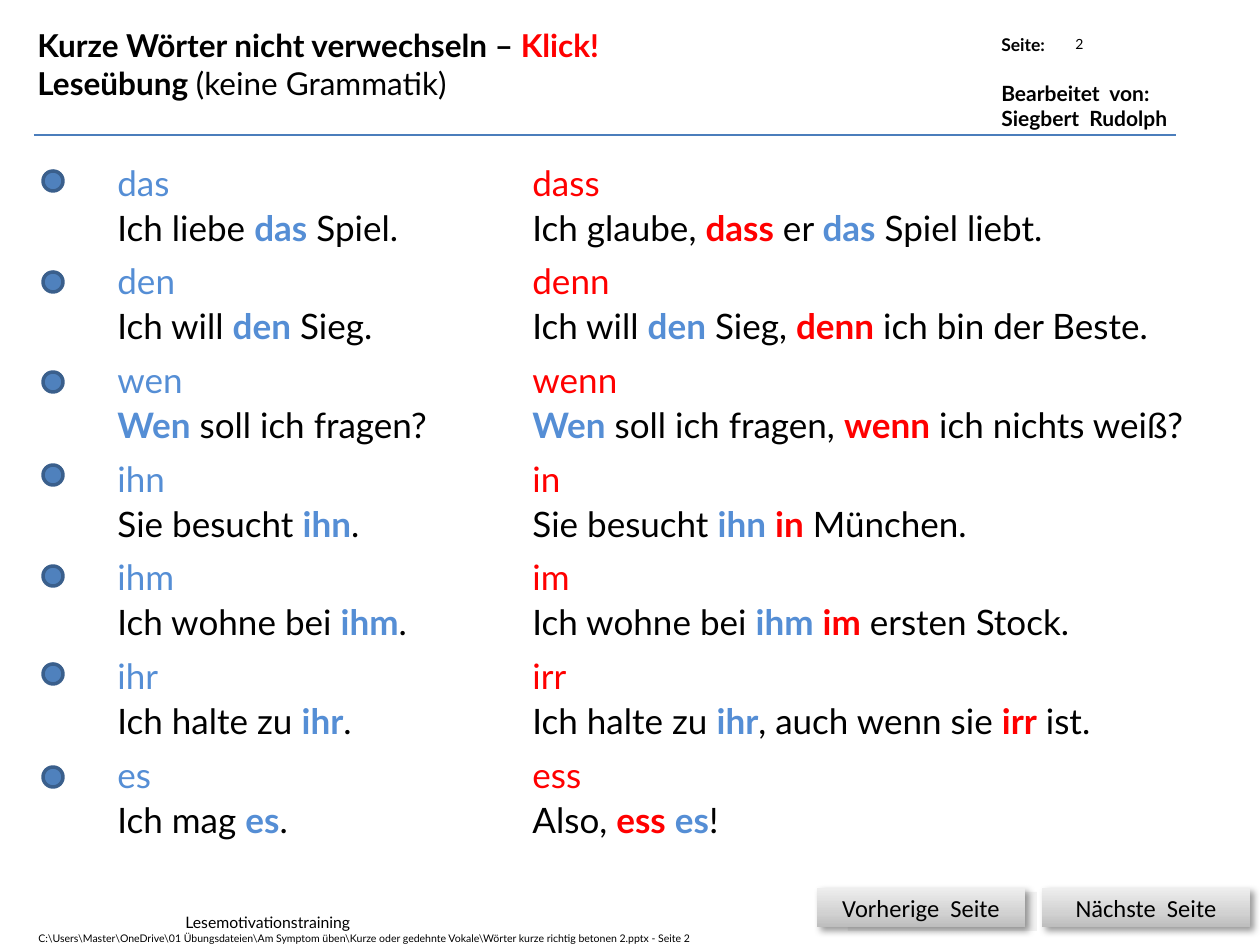
from copy import deepcopy

from lxml.etree import SubElement
from pptx import Presentation
from pptx.dml.color import RGBColor
from pptx.enum.shapes import MSO_CONNECTOR, MSO_SHAPE
from pptx.enum.text import MSO_ANCHOR, MSO_AUTO_SIZE, PP_ALIGN
from pptx.oxml.ns import qn
from pptx.util import Pt

PX = 914400 / 126
BLACK = RGBColor(0x00, 0x00, 0x00)
RED = RGBColor(0xFF, 0x00, 0x00)
BLUE = RGBColor(0x55, 0x8E, 0xD5)
RULE = RGBColor(0x4B, 0x7E, 0xBC)
DOT = RGBColor(0x4F, 0x81, 0xBD)
DOT_EDGE = RGBColor(0x3A, 0x5F, 0x8C)
PALE = RGBColor(0xF2, 0xF2, 0xF2)
BUTTON_STOPS = [
    (0, RGBColor(0xBD, 0xBD, 0xBD)),
    (0.35, RGBColor(0xD1, 0xD1, 0xD1)),
    (1, RGBColor(0xEE, 0xEE, 0xEE)),
]

ROW_TOP, ROW_SPAN, ROW_HEIGHT = 152, 592, 101
LEFT_X, RIGHT_X = 105, 520
DOT_X, DOT_SIZE = 43, 20
ROWS = [
    (171, "das", 325, "Ich liebe |das| Spiel.",
     "dass", 568, "Ich glaube, |dass| er |das| Spiel liebt."),
    (272, "den", 300, "Ich will |den| Sieg.",
     "denn", 683, "Ich will |den| Sieg, |denn| ich bin der Beste."),
    (372, "wen", 344, "|Wen| soll ich fragen?",
     "wenn", 699, "|Wen| soll ich fragen, |wenn| ich nichts weiß?"),
    (465, "ihn", 281, "Sie besucht |ihn|.",
     "in", 473, "Sie besucht |ihn| |in| München."),
    (566, "ihm", 331, "Ich wohne bei |ihm|.",
     "im", 583, "Ich wohne bei |ihm| |im| ersten Stock."),
    (664, "ihr", 281, "Ich halte zu |ihr|.",
     "irr", 625, "Ich halte zu |ihr|, auch wenn sie |irr| ist."),
    (767, "es", 205, "Ich mag |es|.",
     "ess", 223, "Also, |ess| |es|!"),
]
FILE_LINE = (
    r"C:\Users\Master\OneDrive\01 Übungsdateien\Am Symptom üben"
    r"\Kurze oder gedehnte Vokale\Wörter kurze richtig betonen 2.pptx - Seite 2"
)


def emu(*lengths):
    return [round(n * PX) for n in lengths]


def apply(target, values):
    for name, value in values.items():
        setattr(target, name, value)


class SlideBuilder:
    """Holds the text style and the current slide."""

    def __init__(self, slide, font="Lato"):
        self.slide = slide
        self.font = font

    def fill_text(self, tf, paragraphs, size, font=None, **fmt):
        for i, runs in enumerate(paragraphs):
            p = tf.paragraphs[0] if i == 0 else tf.add_paragraph()
            apply(p, fmt)
            for text, color, bold in runs:
                r = p.add_run()
                r.text = text
                apply(r.font, {"name": font or self.font, "size": Pt(size), "bold": bold})
                r.font.color.rgb = color

    def text(self, box, paragraphs, size, frame=None, **fmt):
        sp = self.slide.shapes.add_textbox(*emu(*box))
        tf = sp.text_frame
        apply(tf, frame or {"word_wrap": False, "auto_size": MSO_AUTO_SIZE.SHAPE_TO_FIT_TEXT})
        self.fill_text(tf, paragraphs, size, **fmt)
        return tf

    def shape(self, kind, box, fill=None, line=None):
        sp = self.slide.shapes.add_shape(kind, *emu(*box))
        sp.shadow.inherit = False
        if fill is not None:
            sp.fill.solid()
            sp.fill.fore_color.rgb = fill
        if line is None:
            sp.line.fill.background()
        else:
            sp.line.color.rgb = line
            sp.line.width = Pt(2)
        return sp

    def button(self, box, label):
        sp = self.shape(MSO_SHAPE.RECTANGLE, box)
        sp.fill.gradient()
        sp.fill.gradient_angle = 90
        stops = sp._element.spPr.find(".//" + qn("a:gsLst"))
        stops.insert(1, deepcopy(stops[0]))
        for stop, (position, color) in zip(sp.fill.gradient_stops, BUTTON_STOPS):
            stop.position = position
            stop.color.rgb = color
        effects = sp._element.spPr.find(qn("a:effectLst"))
        shadow = SubElement(effects, qn("a:outerShdw"), blurRad=str(Pt(4)),
                            dist=str(Pt(3)), dir="2700000", algn="tl", rotWithShape="0")
        color = SubElement(shadow, qn("a:srgbClr"), val=str(BLACK))
        SubElement(color, qn("a:alpha"), val="40000")
        tf = sp.text_frame
        tf.vertical_anchor = MSO_ANCHOR.MIDDLE
        self.fill_text(tf, [[(label, BLACK, False)]], 14, "Calibri", alignment=PP_ALIGN.CENTER)

    def rule(self, x1, y1, x2, y2):
        line = self.slide.shapes.add_connector(MSO_CONNECTOR.STRAIGHT, *emu(x1, y1, x2, y2))
        line.line.color.rgb = RULE
        line.line.width = Pt(1)
        SubElement(line._element.spPr, qn("a:effectLst"))

    def example(self, x, y, width, word, color, sentence, red_word):
        runs = [
            (part, BLACK if i % 2 == 0 else RED if part == red_word else BLUE, i % 2 == 1)
            for i, part in enumerate(sentence.split("|")) if part
        ]
        self.text((x, y, width, ROW_HEIGHT), [[(word, color, False)], runs], 20,
                  line_spacing=1.07)


def main():
    prs = Presentation()
    prs.slide_width, prs.slide_height = emu(1260, 945)
    s = SlideBuilder(prs.slides.add_slide(prs.slide_layouts[6]))

    header = s.text((989, 28, 199, 111), [
        [("Seite:", BLACK, True)],
        [("Bearbeitet  von:", BLACK, True)],
        [("Siegbert  Rudolph", BLACK, True)],
    ], 12)
    header.paragraphs[0].runs[0].font.size = Pt(10)
    header.paragraphs[1].space_before = Pt(14.4)
    s.rule(34, 135, 1176, 135)
    s.text((173, 907, 197, 31), [[("Lesemotivationstraining", BLACK, False)]], 9)
    s.text((25, 20, 624, 89), [
        [("Kurze Wörter nicht verwechseln – ", BLACK, True), ("Klick!", RED, True)],
        [("Leseübung ", BLACK, True), ("(keine Grammatik)", BLACK, False)],
    ], 18)
    s.button((1042, 888, 208, 39), "Nächste  Seite")
    s.shape(MSO_SHAPE.RECTANGLE, (848, 892, 189, 39), PALE)
    s.button((817, 888, 208, 39), "Vorherige  Seite")
    s.text((803, 19, 293, 50), [[("2", BLACK, False)]], 8,
           {"word_wrap": True, "vertical_anchor": MSO_ANCHOR.MIDDLE},
           alignment=PP_ALIGN.RIGHT)

    for i, (dot_y, blue, left_w, left, red, right_w, right) in enumerate(ROWS):
        y = ROW_TOP + ROW_SPAN * i // (len(ROWS) - 1)
        s.example(LEFT_X, y, left_w, blue, BLUE, left, red)
        s.example(RIGHT_X, y, right_w, red, RED, right, red)
        s.shape(MSO_SHAPE.OVAL, (DOT_X, dot_y, DOT_SIZE, DOT_SIZE), DOT, DOT_EDGE)

    s.text((26, 926, 683, 25), [[(FILE_LINE, BLACK, False)]], 6)
    prs.save("out.pptx")


if __name__ == "__main__":
    main()
